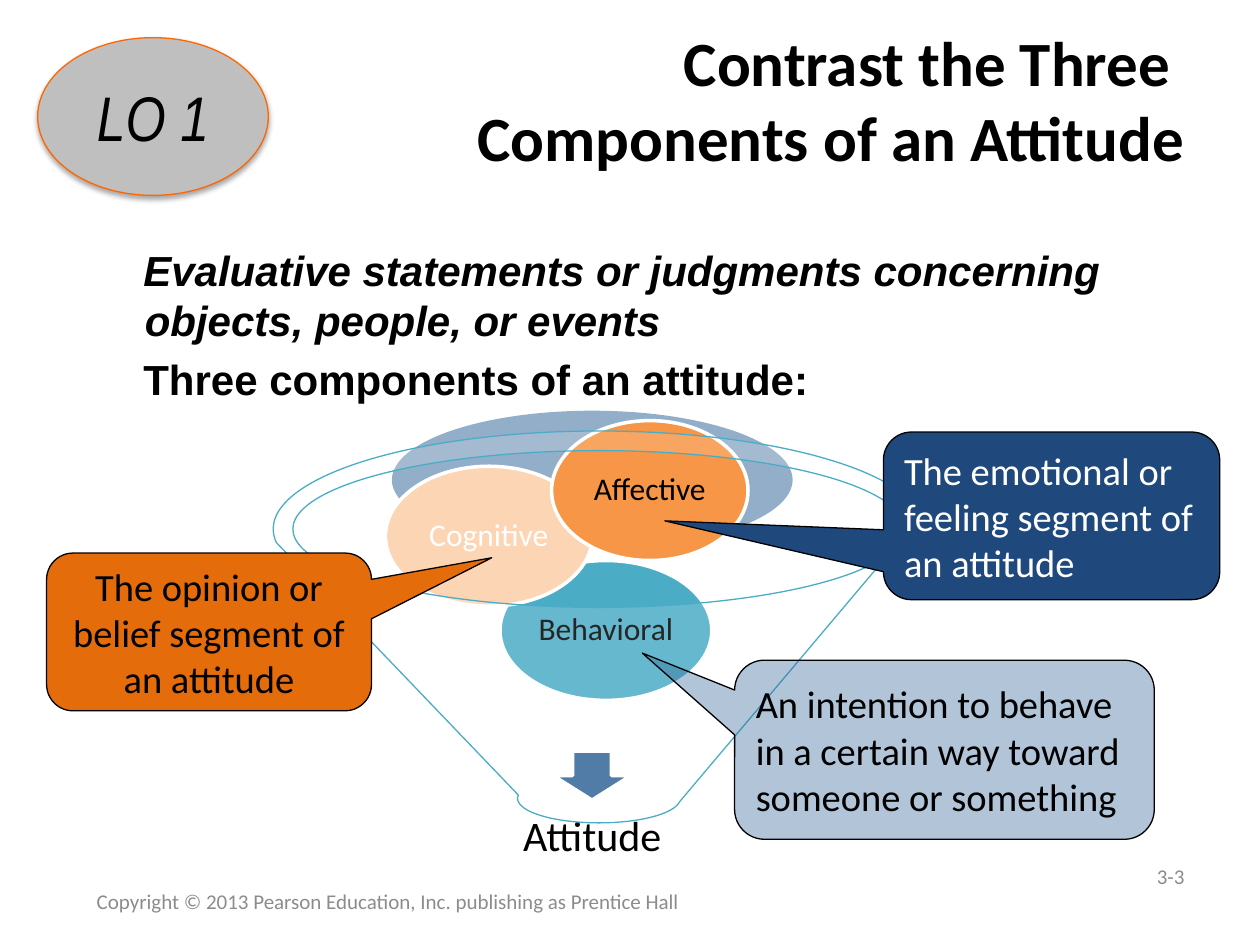
import lxml.etree
import pptx
import pptx.dml.color
import pptx.enum.shapes
import pptx.enum.text
import pptx.oxml
import pptx.oxml.ns
import pptx.util

Cm = pptx.util.Cm
Pt = pptx.util.Pt
SHAPE = pptx.enum.shapes.MSO_SHAPE
ALIGN = pptx.enum.text.PP_ALIGN
MIDDLE = pptx.enum.text.MSO_ANCHOR.MIDDLE
TOP = pptx.enum.text.MSO_ANCHOR.TOP
QN = pptx.oxml.ns.qn


def colour(text):
    """Turn a hex string into a colour."""
    return pptx.dml.color.RGBColor.from_string(text)


def set_values(target, values):
    """Set attributes of the target from a dict."""
    for name, value in values.items():
        setattr(target, name, value)


def place(box, left, top, width, height):
    """Give slide lengths for a part placed relative to a box in centimetres."""
    return Cm(box[0] + left), Cm(box[1] + top), Cm(width), Cm(height)


def write(box, paragraphs, size, ink="000000", face="Calibri", frame=None, para_format=None):
    """Write (text, font values) paragraphs into a shape."""
    set_values(box.text_frame, {"word_wrap": True, "vertical_anchor": MIDDLE, **(frame or {})})
    for index, (text, font) in enumerate(paragraphs):
        para = box.text_frame.paragraphs[0] if index == 0 else box.text_frame.add_paragraph()
        para.text = text
        set_values(para, {"alignment": ALIGN.LEFT, **(para_format or {})})
        if index:
            para.space_before = Pt(5)
        for span in para.runs:
            set_values(span.font, {"size": Pt(size), "name": face, **font})
            span.font.color.rgb = colour(ink)


def draw(shapes, kind, bounds, fill, line=None, weight=0.75, opacity=100):
    """Draw a preset shape with its fill and outline."""
    shape = shapes.add_shape(kind, *bounds)
    shape.shadow.inherit = False
    shape.fill.solid()
    shape.fill.fore_color.rgb = colour(fill)
    if opacity < 100:
        tint = shape.fill._xPr.find(".//" + QN("a:srgbClr"))
        lxml.etree.SubElement(tint, QN("a:alpha"), val=str(opacity * 1000))
    if line:
        shape.line.color.rgb = colour(line)
        shape.line.width = Pt(weight)
    else:
        shape.line.fill.background()
    return shape


def shadow_effect():
    """Make a soft downward shadow."""
    return pptx.oxml.parse_xml(
        f'<a:effectLst {pptx.oxml.ns.nsdecls("a")}>'
        '<a:outerShdw blurRad="39370" dist="22860" dir="5400000" rotWithShape="0">'
        '<a:srgbClr val="000000"><a:alpha val="35000"/></a:srgbClr>'
        '</a:outerShdw></a:effectLst>')


def add_label(page, box, text, size, ink, alignment, **font):
    """Add a single vertically centred line of text in the box."""
    label = page.shapes.add_textbox(*place(box, 0, 0, *box[2:]))
    write(label, [(text, font)], size, ink, para_format={"alignment": alignment})


def add_body(page, box):
    """Add the definition and the lead-in to the diagram."""
    body = page.shapes.add_textbox(*place(box, 0, 0, *box[2:]))
    paragraphs = [
        ("Evaluative statements or judgments concerning objects, people, or events",
         {"bold": True, "italic": True}),
        ("Three components of an attitude:", {"bold": True}),
    ]
    write(body, paragraphs, 24, face="Arial", frame={"vertical_anchor": TOP})
    for para in body.text_frame.paragraphs:
        properties = para._p.get_or_add_pPr()
        properties.set("marL", str(Cm(0.97)))
        properties.set("indent", str(Cm(-0.03)))


def add_funnel(page, box):
    """Add the funnel that turns three components into an attitude."""
    shapes = page.shapes.add_group_shape().shapes
    draw(shapes, SHAPE.OVAL, place(box, 2.39, 0, 8.08, 2.79), "336699", opacity=53)
    draw(shapes, SHAPE.DOWN_ARROW, place(box, 5.64, 6.86, 1.57, 0.99), "336699", "FFFFFF", 2)
    centred = {"alignment": ALIGN.CENTER, "line_spacing": 0.9}
    result = shapes.add_textbox(*place(box, 2.67, 7.67, 7.52, 1.88))
    write(result, [("Attitude", {})], 24, para_format=centred)
    margins = dict.fromkeys(("margin_left", "margin_right", "margin_top", "margin_bottom"), Cm(0.08))
    components = [
        ("Behavioral", 4.57, 3.02, 4.27, "4BACC6", "000000"),
        ("Cognitive", 2.26, 1.12, 4.17, "FCD5B5", "FFFFFF"),
        ("Affective", 5.61, 0.2, 3.96, "F79646", "000000"),
    ]
    for name, left, top, width, fill, ink in components:
        oval = draw(shapes, SHAPE.OVAL, place(box, left, top, width, 2.82), fill, "FFFFFF", 2)
        write(oval, [(name, {})], 18, ink, frame={**margins, "word_wrap": False}, para_format=centred)
    draw(shapes, SHAPE.FUNNEL, place(box, 0, 0.41, 13.13, 7.9), "FFFFFF", "4BACC6", opacity=15)


def add_callout(page, box, text, tip, fill, ink="000000", opacity=100, alignment=ALIGN.LEFT):
    """Add a rounded callout whose tip is given as shares of its size."""
    callout = draw(page.shapes, SHAPE.ROUNDED_RECTANGULAR_CALLOUT,
                   place(box, 0, 0, *box[2:]), fill, "000000", opacity=opacity)
    for index, value in enumerate((*tip, 0.167)):
        callout.adjustments[index] = value
    write(callout, [(text, {})], 22, ink, para_format={"alignment": alignment})


def add_badge(page, box, text):
    """Add the shadowed oval with the objective number."""
    badge = draw(page.shapes, SHAPE.OVAL, place(box, 0, 0, *box[2:]), "BFBFBF", "FF6600")
    properties = badge._element.spPr
    properties.replace(properties.find(QN("a:effectLst")), shadow_effect())
    write(badge, [(text, {"italic": True})], 36, face="Arial Narrow",
          para_format={"alignment": ALIGN.CENTER})
    span = badge.text_frame.paragraphs[0].runs[0]
    span.font._element.find(QN("a:solidFill")).addnext(shadow_effect())


def main():
    """Build the slide and save it."""
    deck = pptx.Presentation()
    deck.slide_width, deck.slide_height = Cm(25.4), Cm(19.05)
    page = deck.slides.add_slide(deck.slide_layouts[6])
    add_label(page, (1.27, 0, 22.86, 3.99), "Contrast the Three \vComponents of an Attitude",
              36, "000000", ALIGN.RIGHT, bold=True)
    add_body(page, (1.7, 4.8, 21.59, 3.81))
    add_label(page, (1.7, 17.65, 15.04, 1.02),
              "Copyright © 2013 Pearson Education, Inc. publishing as Prentice Hall",
              12, "8C8C8C", ALIGN.LEFT)
    add_label(page, (22.43, 17.15, 1.7, 1.02), "3-3", 12, "8C8C8C", ALIGN.RIGHT)
    add_funnel(page, (5.51, 8.28))
    add_callout(page, (17.81, 8.71, 6.78, 3.38), "The emotional or feeling segment of an attitude",
                (-1.15, 0.03), "1F497D", "FFFFFF")
    add_callout(page, (0.94, 11.15, 6.55, 3.18), "The opinion or belief segment of an attitude",
                (0.87, -0.47), "E46C0A", alignment=ALIGN.CENTER)
    add_callout(page, (14.81, 13.31, 8.46, 3.61),
                "An intention to behave in a certain way toward someone or something",
                (-0.72, -0.54), "336699", opacity=38)
    add_badge(page, (0.76, 0.76, 4.65, 3.18), "LO 1")
    deck.save("out.pptx")


if __name__ == "__main__":
    main()
